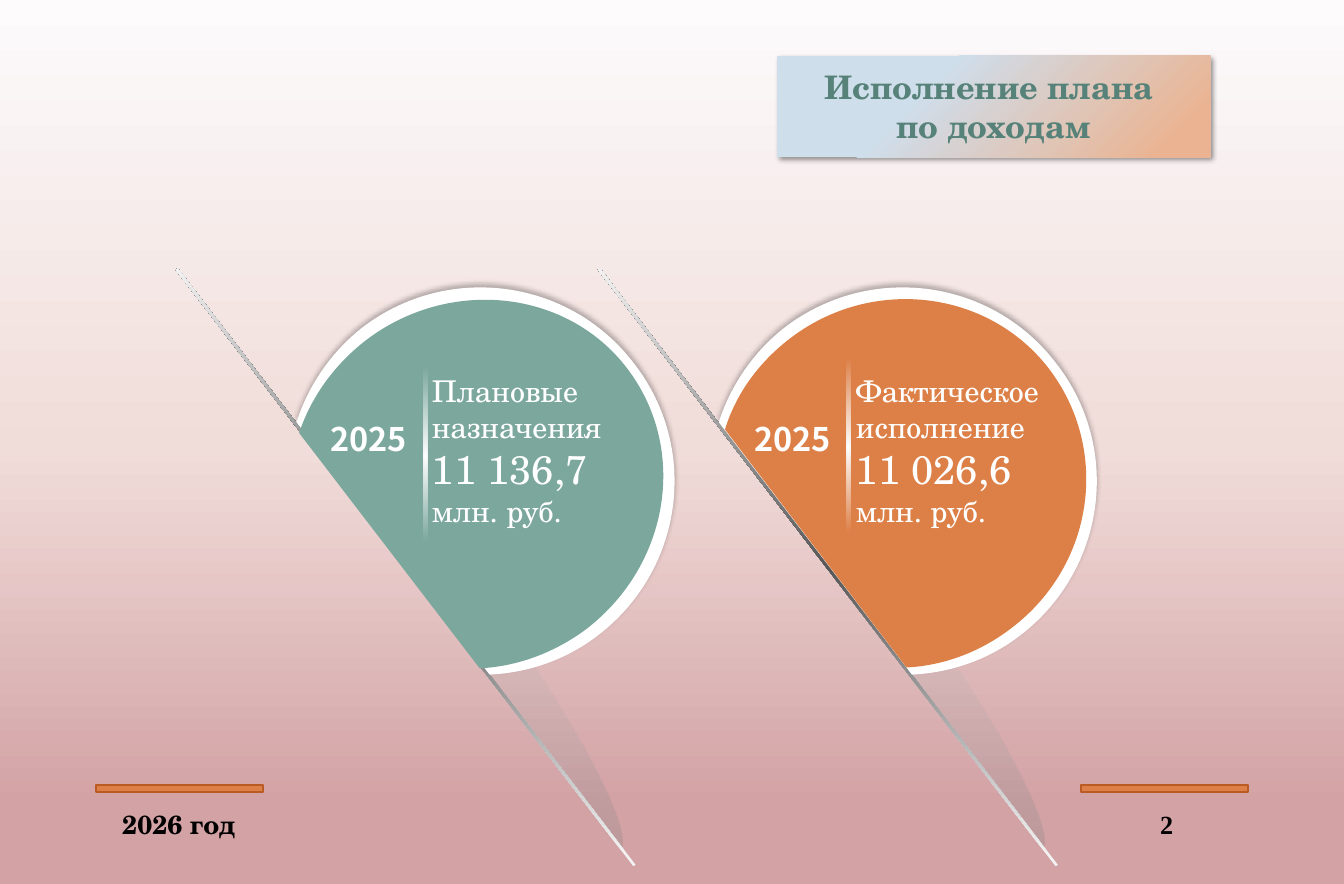
import math

import pptx
import pptx.util
import pptx.dml.color
import pptx.enum.shapes
import pptx.enum.text
import pptx.oxml.ns
from lxml import etree

RGB = pptx.dml.color.RGBColor
WHITE = RGB(0xFF, 0xFF, 0xFF)
BLACK = RGB(0, 0, 0)
ORANGE = RGB(0xDD, 0x80, 0x47)
RUST = RGB(0xB9, 0x5B, 0x22)
GREEN = RGB(0x7B, 0xA7, 0x9D)
DARK_GREEN = RGB(0x57, 0x82, 0x79)
MIST = RGB(0xF2, 0xF2, 0xF2)
GREY = RGB(0x80, 0x80, 0x80)
CHARCOAL = RGB(0x59, 0x59, 0x59)
SKY = RGB(0xCF, 0xDE, 0xEB)
PEACH = RGB(0xEB, 0xB3, 0x91)
SERIF, YEAR_FONT, NUMBER_FONT = "TeX Gyre Schola", "Noto Sans CJK SC", "Times New Roman"

# Content: 100 px to the inch
EMU_PER_PX = 9144
SLIDE_SIZE = (1496, 984)
TITLE = ["Исполнение плана ", "по доходам"]
TITLE_BOX = (865, 62, 482, 113)
FOOTERS = [
    # text, font, text box, left of bar
    ("2026 год", SERIF, (112, 881, 174, 72), 107),
    ("2", NUMBER_FONT, (1203, 881, 191, 72), 1203),
]

# Gradient stops: position %, colour, opacity %
BACKGROUND = [(0, RGB(0xFD, 0xFB, 0xFC), 100), (51, RGB(0xF0, 0xDC, 0xD9), 100),
              (91, RGB(0xD3, 0xA2, 0xA5), 100)]
TITLE_FILL = [(0, SKY, 100), (34, SKY, 100), (91, PEACH, 100)]
NEEDLE_FILL = [(2, MIST, 100), (50, CHARCOAL, 100), (100, MIST, 100)]
WEDGE_FILL = [(26, MIST, 0), (100, GREY, 27)]
DIVIDER_FILL = [(2, WHITE, 0), (50, WHITE, 100), (100, WHITE, 0)]

# Tilted outlines: box before tilting, then a start point, lines (one point) and curves (three points)
TILT = 52.5
NEEDLE = (33, 630, 837, 3)
WEDGE = ((80, 589, 786, 51), [
    [(493, 599)], [(615, 758), (698, 904), (692, 943)], [(214, 319)],
    [(253, 322), (371, 440), (493, 599)]])
HALO = ((356, 338, 431, 339), [
    [(706, 405)], [(779, 499), (761, 634), (666, 707)], [(630, 735), (587, 749), (545, 751)],
    [(330, 470)], [(343, 430), (368, 392), (404, 364)], [(499, 292), (634, 310), (706, 405)]])
GREEN_DISC = ((364, 345, 403, 334), [
    [(698, 410)], [(766, 499), (746, 628), (653, 700)], [(617, 727), (575, 742), (534, 744)],
    [(333, 482)], [(346, 443), (371, 407), (407, 379)], [(500, 308), (631, 322), (698, 410)]])
ORANGE_DISC = ((365, 347, 407, 328), [
    [(698, 411)], [(766, 501), (748, 629), (656, 699)], [(621, 726), (580, 741), (539, 743)],
    [(337, 478)], [(349, 439), (374, 404), (409, 377)], [(500, 307), (630, 322), (698, 411)]])
BADGES = [
    # shift, disc, colour, year box, divider, label box, label
    (470, ORANGE_DISC, ORANGE, (830, 462, 123, 54), (846, 496, 197, 4), (943, 410, 267, 185),
     ["Фактическое исполнение", "11 026,6", "млн. руб."]),
    (0, GREEN_DISC, GREEN, (358, 462, 119, 54), (375, 506, 197, 4), (471, 410, 246, 185),
     ["Плановые назначения", "11 136,7", "млн. руб."]),
]
YEAR = "2025"

presentation = pptx.Presentation()
presentation.slide_width, presentation.slide_height = (n * EMU_PER_PX for n in SLIDE_SIZE)
slide = presentation.slides.add_slide(presentation.slide_layouts[6])


def add_child(parent, tag, **attributes):
    return etree.SubElement(parent, pptx.oxml.ns.qn(tag), {k: str(v) for k, v in attributes.items()})


def add_color(parent, color, opacity):
    add_child(add_child(parent, "a:srgbClr", val=color), "a:alpha", val=opacity * 1000)


def fill_gradient(owner, fill, stops, clockwise):
    fill.gradient()
    fill.gradient_angle = -clockwise % 360
    stop_list = owner.element.find(".//" + pptx.oxml.ns.qn("a:gsLst"))
    for old in list(stop_list):
        stop_list.remove(old)
    for position, color, opacity in stops:
        add_color(add_child(stop_list, "a:gs", pos=position * 1000), color, opacity)


def paint(shape, fill, clockwise=0):
    shape.shadow.inherit = False
    shape.line.fill.background()
    if isinstance(fill, list):
        fill_gradient(shape, shape.fill, fill, clockwise)
    else:
        shape.fill.solid()
        shape.fill.fore_color.rgb = fill
    return shape


def add_bar(shapes, box, fill, clockwise=0, rotation=0):
    bar = shapes.add_shape(pptx.enum.shapes.MSO_SHAPE.RECTANGLE, *(n * EMU_PER_PX for n in box))
    bar.rotation = rotation
    return paint(bar, fill, clockwise)


def add_tilted(shapes, outline, shift, fill, clockwise=0):
    (left, top, width, height), segments = outline
    corners = [(left, top), (left + width, top), (left + width, top + height), (left, top + height)]
    start, *rest = [((x + shift) * EMU_PER_PX, y * EMU_PER_PX) for x, y in corners]
    builder = shapes.build_freeform(*start)
    builder.add_line_segments(rest, close=True)
    shape = builder.convert_to_shape()
    shape.rotation = TILT

    # Turn the points back into the untilted box and write them as curves
    cos, sin = math.cos(math.radians(TILT)), math.sin(math.radians(TILT))
    drawing = shape.element.find(".//" + pptx.oxml.ns.qn("a:path"))
    for old in list(drawing):
        drawing.remove(old)
    for index, segment in enumerate(segments):
        tag = "a:moveTo" if index == 0 else "a:lnTo" if len(segment) == 1 else "a:cubicBezTo"
        command = add_child(drawing, tag)
        for x, y in segment:
            dx, dy = x - left - width / 2, y - top - height / 2
            add_child(command, "a:pt", x=round((dx * cos + dy * sin + width / 2) * EMU_PER_PX),
                      y=round((dy * cos - dx * sin + height / 2) * EMU_PER_PX))
    add_child(drawing, "a:close")

    paint(shape, fill, clockwise)
    if isinstance(fill, list):
        shape.element.spPr.find(pptx.oxml.ns.qn("a:gradFill")).set("rotWithShape", "0")
    return shape


def add_shadow(shape, opacity, direction):
    effects = shape.element.spPr.find(pptx.oxml.ns.qn("a:effectLst"))
    shadow = add_child(effects, "a:outerShdw", blurRad=pptx.util.Pt(4), dist=pptx.util.Pt(3),
                       dir=direction * 60000, algn="ctr", rotWithShape=0)
    add_color(shadow, BLACK, opacity)


def write(shape, lines, sizes, font, color, bold=False, centered=False):
    frame = shape.text_frame
    frame.word_wrap = True
    frame.text = "\n".join(lines)
    anchors, aligns = pptx.enum.text.MSO_ANCHOR, pptx.enum.text.PP_ALIGN
    frame.vertical_anchor = anchors.MIDDLE if centered else anchors.TOP
    for paragraph, size in zip(frame.paragraphs, sizes):
        paragraph.alignment = aligns.CENTER if centered else aligns.LEFT
        for run in paragraph.runs:
            run.font.size = pptx.util.Pt(size)
            run.font.name = font
            run.font.bold = bold
            run.font.color.rgb = color


def add_text(box, *style, **options):
    write(slide.shapes.add_textbox(*(n * EMU_PER_PX for n in box)), *style, **options)


# Background
fill_gradient(slide, slide.background.fill, BACKGROUND, 90)

# Footer bars and captions
for caption, font, box, bar_left in FOOTERS:
    bar = add_bar(slide.shapes, (bar_left, 874, 186, 8), ORANGE)
    bar.line.color.rgb = RUST
    bar.line.width = pptx.util.Pt(1.5)
    add_text(box, [caption], [21], font, BLACK, bold=True, centered=True)

# Badges: needle, cast wedge, white halo, coloured disc
for shift, disc, color, *_ in BADGES:
    badge = slide.shapes.add_group_shape().shapes
    left, *rest = NEEDLE
    add_bar(badge, (left + shift, *rest), NEEDLE_FILL, 180, TILT)
    add_tilted(badge, WEDGE, shift, WEDGE_FILL, 90)
    add_shadow(add_tilted(badge, HALO, shift, WHITE), 25, 270)
    add_tilted(badge, disc, shift, color)

# Dividers, labels and years
for *_, year_box, divider, label_box, label in BADGES:
    add_bar(slide.shapes, divider, DIVIDER_FILL, 180, 90)
    add_text(label_box, label, [24, 32, 24], SERIF, WHITE)
    add_text(year_box, [YEAR], [26], YEAR_FONT, WHITE, bold=True)

# Title
title = add_bar(slide.shapes, TITLE_BOX, TITLE_FILL, 45)
add_shadow(title, 40, 45)
write(title, TITLE, [26, 26], SERIF, DARK_GREEN, bold=True, centered=True)

presentation.save("out.pptx")
